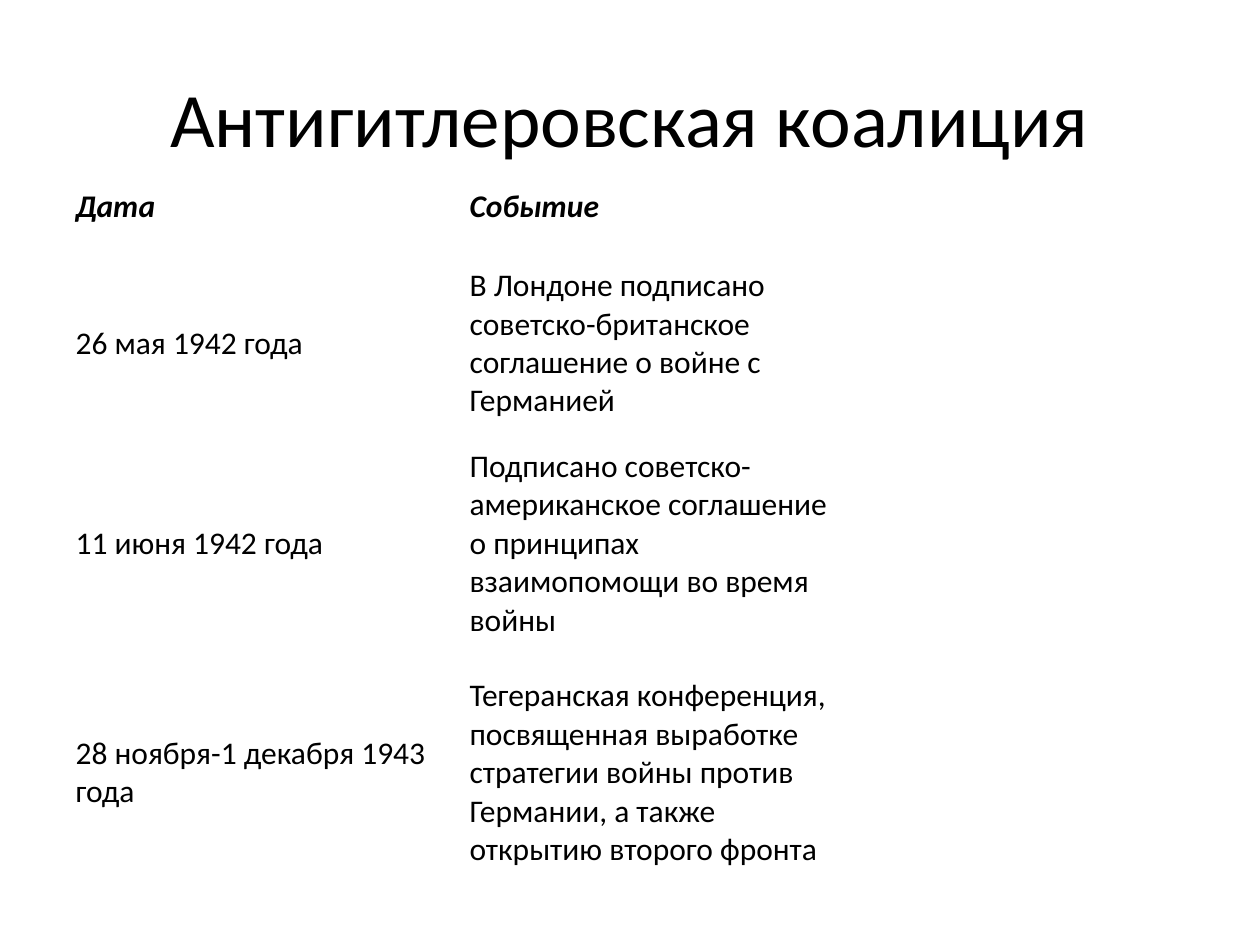
from pptx import Presentation
from pptx.dml.color import RGBColor
from pptx.enum.text import MSO_ANCHOR, PP_ALIGN
from pptx.util import Emu, Pt

MIDDLE = MSO_ANCHOR.MIDDLE
CENTER, LEFT = PP_ALIGN.CENTER, PP_ALIGN.LEFT

TITLE = "Антигитлеровская коалиция"
ROWS = [
    ("Дата", "Событие"),
    ("26 мая 1942 года",
     "В Лондоне подписано советско-британское соглашение о войне с Германией"),
    ("11 июня 1942 года",
     "Подписано советско-американское соглашение о принципах взаимопомощи "
     "во время войны"),
    ("28 ноября-1 декабря 1943 года",
     "Тегеранская конференция, посвященная выработке стратегии войны против "
     "Германии, а также открытию второго фронта"),
]
COLORS = {"text": "000000"}
FONT = "Calibri"

PAGE_SIZE = (1260, 945)
TITLE_BOX = (63, 38, 1134, 157)
TABLE_LEFT, TABLE_TOP = 63, 168
COLUMN_WIDTH = 394
ROW_HEIGHTS = [78, 195, 195, 254]


def px(length):
    return Emu(round(length * 914400 / 126))


def write(frame, text, size, align, emphasis=False):
    frame.text = text
    paragraph = frame.paragraphs[0]
    paragraph.alignment = align
    font = paragraph.font
    font.name, font.size = FONT, Pt(size)
    font.bold = font.italic = emphasis
    font.color.rgb = RGBColor.from_string(COLORS["text"])


def add_title(page):
    title = page.shapes.title
    title.left, title.top, title.width, title.height = map(px, TITLE_BOX)
    title.text_frame.vertical_anchor = MIDDLE
    write(title.text_frame, TITLE, 44, CENTER)


def add_events(page):
    columns = len(ROWS[0])
    table = page.shapes.add_table(
        len(ROWS), columns, px(TABLE_LEFT), px(TABLE_TOP),
        px(COLUMN_WIDTH * columns), px(sum(ROW_HEIGHTS))).table
    table.first_row = table.horz_banding = False
    for column in table.columns:
        column.width = px(COLUMN_WIDTH)
    for row_index, (texts, height) in enumerate(zip(ROWS, ROW_HEIGHTS)):
        table.rows[row_index].height = px(height)
        for column_index, text in enumerate(texts):
            cell = table.cell(row_index, column_index)
            cell.fill.background()
            cell.vertical_anchor = MIDDLE
            write(cell.text_frame, text, 18, LEFT, emphasis=row_index == 0)


def main():
    deck = Presentation()
    deck.slide_width, deck.slide_height = map(px, PAGE_SIZE)
    page = deck.slides.add_slide(deck.slide_layouts[5])
    add_title(page)
    add_events(page)
    deck.save("out.pptx")


if __name__ == "__main__":
    main()
